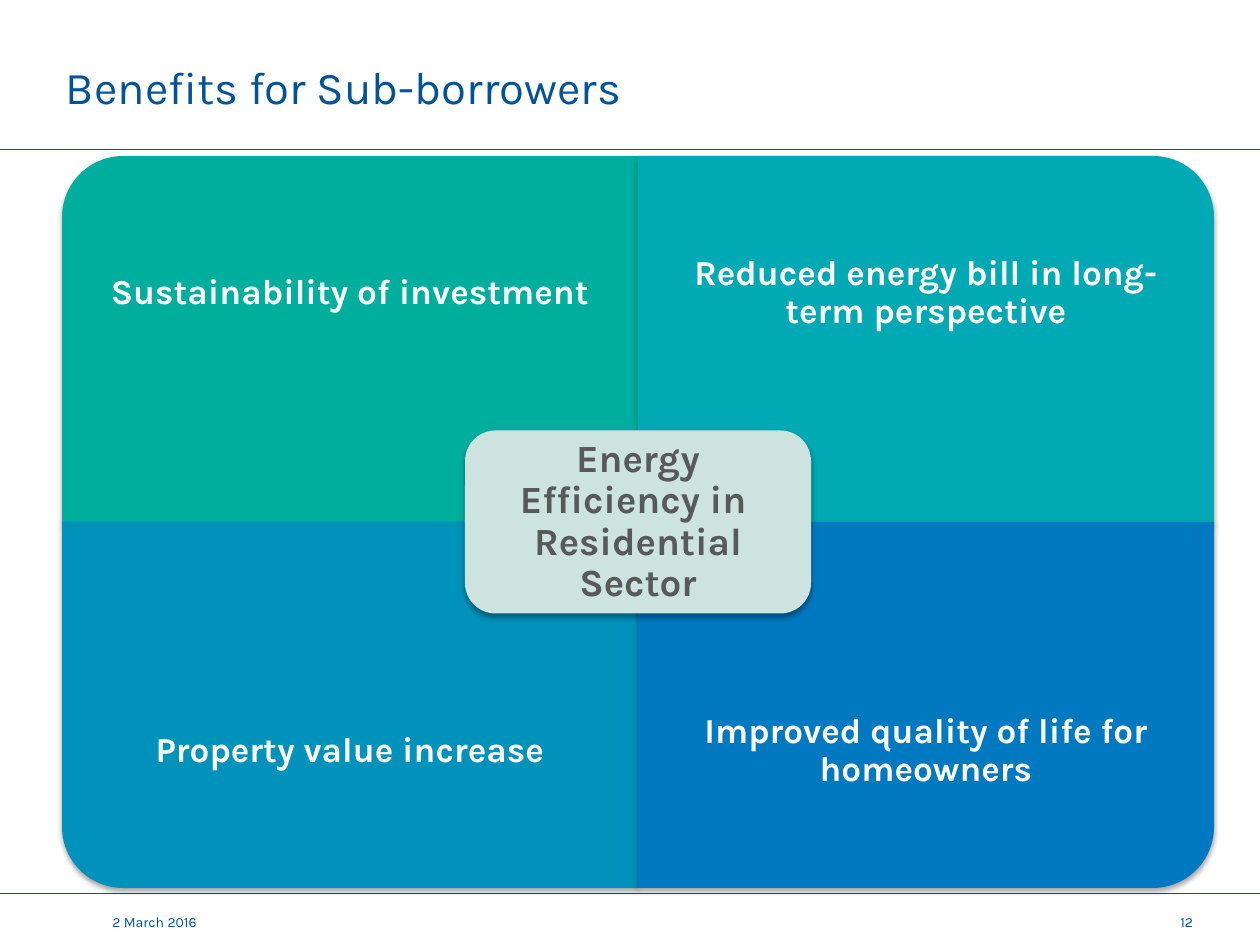
import pptx
import pptx.util
import pptx.dml.color
import pptx.enum.shapes
import pptx.enum.text
import pptx.oxml
import pptx.oxml.ns

SLIDE_SIZE = (1260, 945)
FONT = "Karla"
TITLE = "Benefits for Sub-borrowers"
CENTRE_LINES = ["Energy Efficiency in ", "Residential Sector"]
BENEFITS = [
    ("Sustainability of investment", "00AE9E", 270),
    ("Reduced energy bill in long-term perspective", "00A9B4", 0),
    ("Property value increase", "0092BB", 180),
    ("Improved quality of life for homeowners", "0079C1", 90),
]
FOOTER = [
    ("2 March 2016", (100, 907, 112, 47), False),
    ("12", (1168, 907, 47, 29), True),
]
RULE_TOPS = [149, 893]
BLUE = "00539B"

GRID_LEFT, GRID_TOP = 62, 156
TILE_WIDTH, TILE_HEIGHT = 576, 366
LABEL_HEIGHT = 274
CENTRE_WIDTH, CENTRE_HEIGHT = 346, 183
CENTRE_INSET = 9

NAMESPACE = pptx.oxml.ns.nsdecls("a")
SHADOW = (
    f'<a:effectLst {NAMESPACE}><a:outerShdw blurRad="39370" dist="22860" '
    'dir="5400000" rotWithShape="0"><a:srgbClr val="000000">'
    '<a:alpha val="35000"/></a:srgbClr></a:outerShdw></a:effectLst>'
)
ALIGN = pptx.enum.text.PP_ALIGN
ANCHOR = pptx.enum.text.MSO_ANCHOR


def px(value):
    return round(value * 914400 / 126)


def colour(value):
    return pptx.dml.color.RGBColor.from_string(value)


def write_text(shape, lines, size, color, bold=False, align=ALIGN.LEFT,
               anchor=ANCHOR.TOP, inset=None, spacing=None, wrap=True):
    frame = shape.text_frame
    frame.word_wrap = wrap
    frame.vertical_anchor = anchor
    if inset is not None:
        frame.margin_left = frame.margin_right = px(inset)
        frame.margin_top = frame.margin_bottom = px(inset)
    paragraph = frame.paragraphs[0]
    paragraph.alignment = align
    paragraph.line_spacing = spacing
    for index, line in enumerate(lines):
        if index:
            paragraph.add_line_break()
        run = paragraph.add_run()
        run.text = line
        run.font.name = FONT
        run.font.size = pptx.util.Pt(size)
        run.font.bold = bold
        run.font.color.rgb = colour(color)


def add_text(slide, lines, box, **text_format):
    shape = slide.shapes.add_textbox(*map(px, box))
    write_text(shape, lines, **text_format)


def add_panel(slide, kind, box, fill, rotation=0):
    left, top, width, height = box
    if rotation % 180:
        left += (width - height) / 2
        top += (height - width) / 2
        width, height = height, width
    shape = slide.shapes.add_shape(kind, px(left), px(top), px(width), px(height))
    shape.rotation = rotation
    shape.fill.solid()
    shape.fill.fore_color.rgb = colour(fill)
    shape.line.fill.background()
    shape._element.spPr.append(pptx.oxml.parse_xml(SHADOW))


def add_rule(slide, top):
    line = slide.shapes.add_connector(
        pptx.enum.shapes.MSO_CONNECTOR.STRAIGHT, 0, px(top), px(SLIDE_SIZE[0]), px(top))
    line.line.color.rgb = colour("005198")
    line.line.width = pptx.util.Pt(0.25)
    line._element.spPr.append(pptx.oxml.parse_xml(f"<a:effectLst {NAMESPACE}/>"))


def main():
    presentation = pptx.Presentation()
    presentation.slide_width, presentation.slide_height = map(px, SLIDE_SIZE)
    slide = presentation.slides.add_slide(presentation.slide_layouts[5])
    shapes = pptx.enum.shapes.MSO_SHAPE

    for top in RULE_TOPS:
        add_rule(slide, top)

    title = slide.shapes.title
    title.left, title.top, title.width, title.height = map(px, (66, 24, 902, 125))
    write_text(title, [TITLE], size=26, color=BLUE, anchor=ANCHOR.MIDDLE, inset=0)

    label_format = dict(bold=True, align=ALIGN.CENTER, anchor=ANCHOR.MIDDLE, spacing=0.9)
    for index, (label, fill, rotation) in enumerate(BENEFITS):
        row, column = divmod(index, 2)
        left = GRID_LEFT + column * TILE_WIDTH
        top = GRID_TOP + row * TILE_HEIGHT
        add_panel(slide, shapes.ROUND_1_RECTANGLE,
                  (left, top, TILE_WIDTH, TILE_HEIGHT), fill, rotation)
        label_top = top + row * (TILE_HEIGHT - LABEL_HEIGHT)
        add_text(slide, [label], (left, label_top, TILE_WIDTH, LABEL_HEIGHT),
                 size=20, color="FFFFFF", inset=20, **label_format)

    left = GRID_LEFT + TILE_WIDTH - CENTRE_WIDTH / 2
    top = GRID_TOP + TILE_HEIGHT - CENTRE_HEIGHT / 2
    add_panel(slide, shapes.ROUNDED_RECTANGLE,
              (left, top, CENTRE_WIDTH, CENTRE_HEIGHT), "CCE3DF")
    add_text(slide, CENTRE_LINES,
             (left + CENTRE_INSET, top + CENTRE_INSET,
              CENTRE_WIDTH - 2 * CENTRE_INSET, CENTRE_HEIGHT - 2 * CENTRE_INSET),
             size=22, color="58595B", inset=11, **label_format)

    for text, box, wrap in FOOTER:
        add_text(slide, [text], box, size=8, color=BLUE, wrap=wrap)

    presentation.save("out.pptx")


if __name__ == "__main__":
    main()
